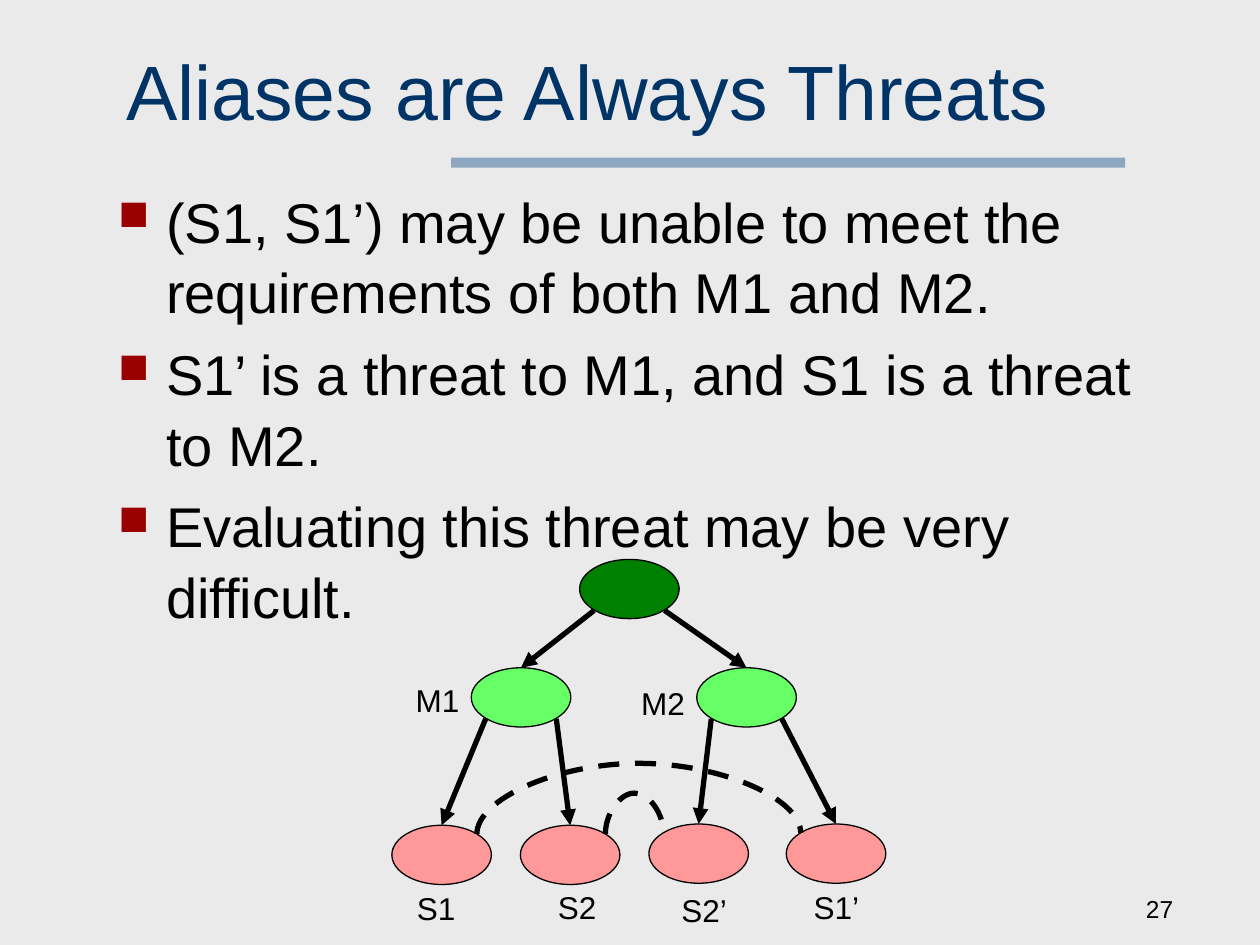
from lxml import etree
from pptx import Presentation
from pptx.dml.color import RGBColor
from pptx.enum import shapes as kinds, text as txt
from pptx.oxml.ns import qn
from pptx.util import Inches, Pt

BACK = RGBColor(0xEA, 0xEA, 0xEA)
NAVY = RGBColor(0x00, 0x33, 0x66)
STEEL = RGBColor(0x33, 0x66, 0x99)
BLACK = RGBColor(0, 0, 0)
DARK = RGBColor(0x00, 0x80, 0x00)
LIGHT = RGBColor(0x66, 0xFF, 0x66)
PINK = RGBColor(0xFF, 0x99, 0x99)

WIDE, HIGH = 0.79, 0.47  # node size
DX, DY = 0.28, 0.17  # from a node's centre to its diagonal points

prs = Presentation()
prs.slide_width, prs.slide_height = Inches(10), Inches(7.5)
slide = prs.slides.add_slide(prs.slide_layouts[5])
slide.background.fill.solid()
slide.background.fill.fore_color.rgb = BACK


def write(left, top, width, height, lines, size, wrap=True):
    box = slide.shapes.add_textbox(Inches(left), Inches(top), Inches(width), Inches(height))
    frame = box.text_frame
    frame.word_wrap = wrap
    frame.text = "\n".join(lines)
    for par in frame.paragraphs:
        par.font.size, par.font.name = Pt(size), "Arial"
        par.font.color.rgb = BLACK
    return frame


def link(kind, x1, y1, x2, y2, tag, val):
    """Add a thick black connector with one extra line property."""
    line = slide.shapes.add_connector(kind, Inches(x1), Inches(y1), Inches(x2), Inches(y2))
    line.line.width = Pt(3)
    line.line.color.rgb = BLACK
    props = line.line._get_or_add_ln()
    etree.SubElement(props, qn(tag)).set("type" if tag == "a:headEnd" else "val", val)
    etree.SubElement(line._element.spPr, qn("a:effectLst"))
    return line


# Rule under the title
rule = slide.shapes.add_shape(kinds.MSO_SHAPE.RECTANGLE, Inches(3.58), Inches(1.25),
                              Inches(5.35), Inches(0.08))
rule.shadow.inherit = False
rule.fill.solid()
rule.fill.fore_color.rgb = STEEL
rule.line.fill.background()
tint = rule._element.spPr.find(qn("a:solidFill"))[0]
etree.SubElement(tint, qn("a:alpha")).set("val", "50000")

# Title
title = slide.shapes.title
title.left, title.top = Inches(0.9), Inches(0.25)
title.width, title.height = Inches(8.55), Inches(0.92)
title.text_frame.text = "Aliases are Always Threats"
head = title.text_frame.paragraphs[0]
head.alignment = txt.PP_ALIGN.LEFT
head.font.size, head.font.name = Pt(44), "Arial"
head.font.color.rgb = NAVY

# Bulleted points
body = write(0.84, 1.41, 8.46, 3.59, [
    "(S1, S1’) may be unable to meet the requirements of both M1 and M2.",
    "S1’ is a threat to M1, and S1 is a threat to M2.",
    "Evaluating this threat may be very difficult.",
], 32)
for par in body.paragraphs:
    par.line_spacing = 1.05
    par.space_before = Pt(6.4)
    props = par._p.get_or_add_pPr()
    props.set("marL", str(Inches(0.38)))
    props.set("indent", str(-Inches(0.38)))
    mark = etree.Element(qn("a:buClr"))
    etree.SubElement(mark, qn("a:srgbClr")).set("val", "9A0000")
    size = etree.Element(qn("a:buSzPct"))
    size.set("val", "75000")
    sign = etree.Element(qn("a:buChar"))
    sign.set("char", "■")
    at = props.index(props.find(qn("a:defRPr")))
    props[at:at] = [mark, size, sign]

# Slide number
page = write(7.33, 6.88, 2.08, 0.5, ["27"], 14)
page.vertical_anchor = txt.MSO_ANCHOR.BOTTOM
page.paragraphs[0].alignment = txt.PP_ALIGN.RIGHT

# Tree nodes: left, top, colour
nodes = {
    "root": (4.6, 4.44, DARK),
    "M1": (3.74, 5.3, LIGHT),
    "M2": (5.53, 5.3, LIGHT),
    "S1": (3.11, 6.55, PINK),
    "S2": (4.13, 6.55, PINK),
    "S2’": (5.15, 6.54, PINK),
    "S1’": (6.24, 6.54, PINK),
}
mid = {}
for name, (left, top, color) in nodes.items():
    node = slide.shapes.add_shape(kinds.MSO_SHAPE.OVAL, Inches(left), Inches(top),
                                  Inches(WIDE), Inches(HIGH))
    node.shadow.inherit = False
    node.fill.solid()
    node.fill.fore_color.rgb = color
    node.line.color.rgb = BLACK
    node.line.width = Pt(0.75)
    mid[name] = left + WIDE / 2, top + HIGH / 2

# Arrows from each parent to its left and right child
tree = {"root": ("M1", "M2"), "M1": ("S1", "S2"), "M2": ("S2’", "S1’")}
for top, pair in tree.items():
    for side, low in zip((-1, 1), pair):
        x, y = mid[low]
        link(kinds.MSO_CONNECTOR.STRAIGHT, x, y - HIGH / 2,
             mid[top][0] + side * DX, mid[top][1] + DY, "a:headEnd", "triangle")

# Dashed arcs between aliases: a thin curved connector turned by 90 degrees
THIN = 0.01
for one, two, rise in (("S2", "S2’", 0.33), ("S1", "S1’", 0.57)):
    x1, x2 = mid[one][0] + DX, mid[two][0] - DX
    x, y, half = (x1 + x2) / 2, mid[one][1] - DY, (x2 - x1) / 2
    arc = link(kinds.MSO_CONNECTOR.CURVE, x + THIN / 2, y + half,
               x - THIN / 2, y - half, "a:prstDash", "dash")
    shape = arc._element.spPr
    shape.find(qn("a:xfrm")).set("rot", "5400000")
    bend = etree.SubElement(shape.find(qn("a:prstGeom")).find(qn("a:avLst")), qn("a:gd"))
    bend.set("name", "adj1")
    bend.set("fmla", f"val {round(rise / THIN * 100000)}")

# Node labels
for name, left, top, width in (
    ("M1", 3.2, 5.36, 0.55), ("M2", 4.99, 5.38, 0.55),
    ("S1", 3.21, 7.01, 0.51), ("S2", 4.33, 7, 0.51),
    ("S2’", 5.31, 7.02, 0.57), ("S1’", 6.36, 7, 0.57),
):
    write(left, top, width, 0.4, [name], 18, wrap=False)

prs.save("out.pptx")
